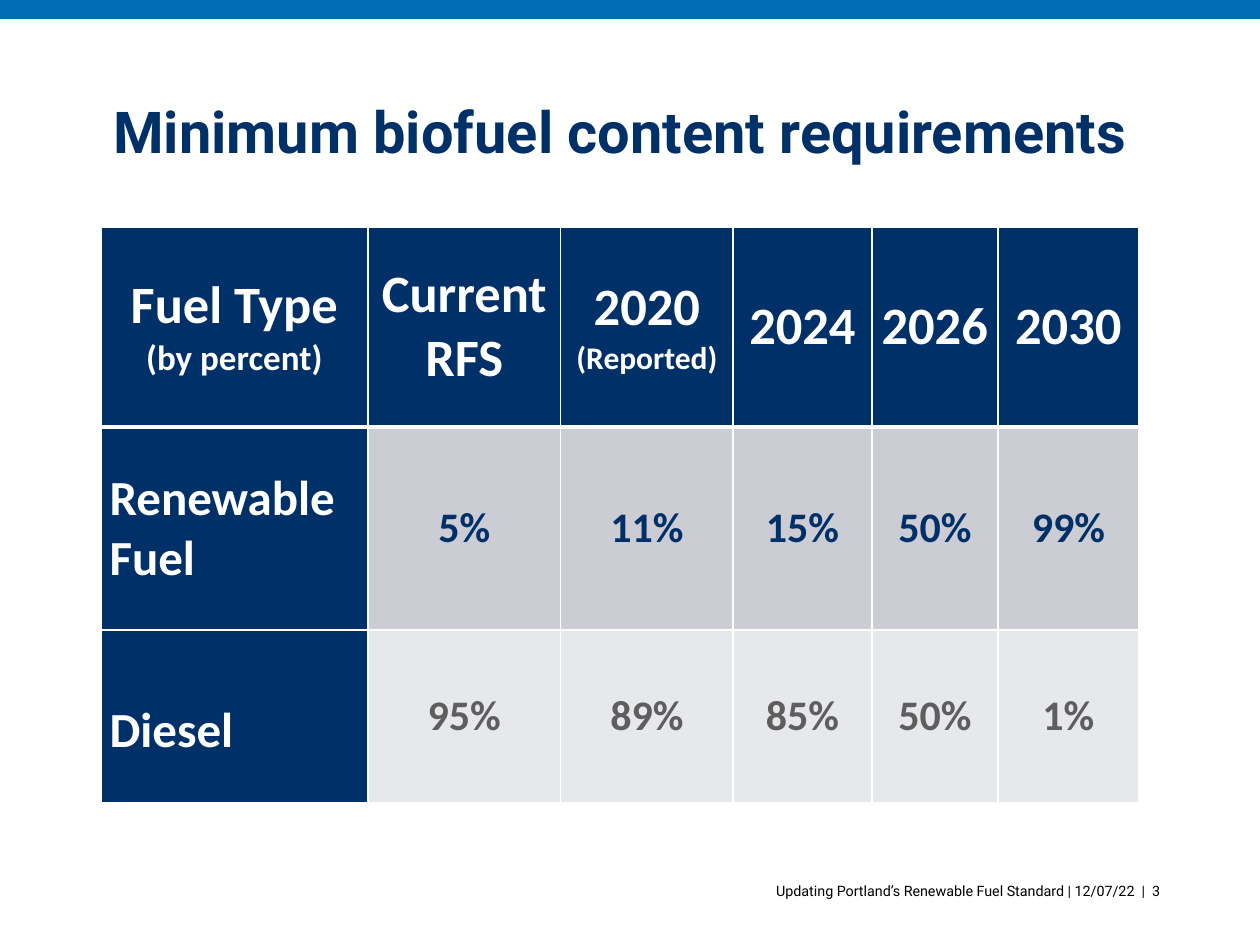
from dataclasses import dataclass
from lxml.etree import SubElement
from pptx import Presentation
from pptx.dml.color import RGBColor
from pptx.enum.shapes import MSO_SHAPE
from pptx.enum.text import MSO_ANCHOR, MSO_AUTO_SIZE, PP_ALIGN
from pptx.oxml.ns import qn
from pptx.slide import Slide
from pptx.table import _Cell
from pptx.text.text import Font
from pptx.util import Inches, Pt


@dataclass(frozen=True)
class Theme:
    navy: str = "003068"
    blue: str = "006DB6"
    white: str = "FFFFFF"
    black: str = "000000"
    gray: str = "5E5E5E"
    mid: str = "CCCDD4"
    pale: str = "E7E8EB"
    head: str = "Roboto"
    body: str = "Calibri"
    title: float = 33
    column: float = 30
    label: float = 28
    value: float = 24
    foot: float = 8.2


@dataclass(frozen=True)
class Head:
    text: str
    width: float
    note: str = ""
    size: float = 0


@dataclass(frozen=True)
class Fuel:
    name: str
    shares: tuple[int, ...]
    height: float
    fill: str
    ink: str


THEME = Theme()
HEADS = (
    Head("Fuel Type ", 2.12, "(by percent)", 20),
    Head("Current RFS", 1.53),
    Head("2020 ", 1.37, "(Reported)", 18),
    Head("2024", 1.1),
    Head("2026", 1),
    Head("2030", 1.12),
)
FUELS = (
    Fuel("Renewable Fuel", (5, 11, 15, 50, 99), 1.61, THEME.mid, THEME.navy),
    Fuel("Diesel", (95, 89, 85, 50, 1), 1.37, THEME.pale, THEME.gray),
)
TOP = 1.59


def style(font: Font, face: str, size: float, ink: str, bold: bool = True) -> None:
    font.name = face
    font.size = Pt(size)
    font.bold = bold
    font.color.rgb = RGBColor.from_string(ink)


def edge(cell: _Cell, side: str, width: float) -> None:
    line = SubElement(cell._tc.get_or_add_tcPr(), qn(f"a:ln{side}"), w=str(Pt(width)))
    fill = SubElement(line, qn("a:solidFill"))
    SubElement(fill, qn("a:srgbClr"), val=THEME.white)


def fill_cell(cell: _Cell, text: str, size: float, ink: str, fill: str,
              top: float = 1, base: float = 1) -> None:
    for side, width in zip("LRTB", (1, 1, top, base)):
        edge(cell, side, width)
    cell.fill.solid()
    cell.fill.fore_color.rgb = RGBColor.from_string(fill)
    cell.margin_left = cell.margin_right = Inches(0.07)
    cell.margin_top = cell.margin_bottom = 0
    cell.vertical_anchor = MSO_ANCHOR.MIDDLE
    para = cell.text_frame.paragraphs[0]
    para.add_run().text = text
    para.alignment = PP_ALIGN.CENTER
    style(para.font, THEME.body, size, ink)


def add_bar(slide: Slide) -> None:
    bar = slide.shapes.add_shape(MSO_SHAPE.RECTANGLE, 0, 0, Inches(10), Inches(0.15))
    bar.shadow.inherit = False
    bar.fill.solid()
    bar.fill.fore_color.rgb = RGBColor.from_string(THEME.blue)
    bar.line.fill.background()


def add_title(slide: Slide) -> None:
    title = slide.shapes.title
    title.left, title.top = Inches(0.8), Inches(0.71)
    title.width, title.height = Inches(8.87), Inches(0.72)
    frame = title.text_frame
    frame.text = "Minimum biofuel content requirements"
    frame.auto_size = MSO_AUTO_SIZE.NONE
    frame.vertical_anchor = MSO_ANCHOR.MIDDLE
    para = frame.paragraphs[0]
    para.alignment = PP_ALIGN.LEFT
    para.line_spacing = 0.9
    style(para.font, THEME.head, THEME.title, THEME.navy)


def add_foot(slide: Slide) -> None:
    box = slide.shapes.add_textbox(Inches(3.7), Inches(6.95), Inches(5.61), Inches(0.4))
    frame = box.text_frame
    frame.word_wrap = True
    frame.text = "Updating Portland’s Renewable Fuel Standard | 12/07/22  |  3"
    para = frame.paragraphs[0]
    para.alignment = PP_ALIGN.RIGHT
    style(para.font, THEME.head, THEME.foot, THEME.black, False)


def add_grid(slide: Slide) -> None:
    width = sum(head.width for head in HEADS)
    height = TOP + sum(fuel.height for fuel in FUELS)
    grid = slide.shapes.add_table(len(FUELS) + 1, len(HEADS), Inches(0.8), Inches(1.8),
                                  Inches(width), Inches(height)).table
    grid.rows[0].height = Inches(TOP)
    for col, head in enumerate(HEADS):
        grid.columns[col].width = Inches(head.width)
        cell = grid.cell(0, col)
        fill_cell(cell, head.text, THEME.column, THEME.white, THEME.navy, base=3)
        if head.note:
            note = cell.text_frame.paragraphs[0].add_run()
            note.text = head.note
            note.font.size = Pt(head.size)
    for row, fuel in enumerate(FUELS, 1):
        grid.rows[row].height = Inches(fuel.height)
        top = 3 if row == 1 else 1
        name = grid.cell(row, 0)
        fill_cell(name, fuel.name, THEME.label, THEME.white, THEME.navy, top)
        name.vertical_anchor = MSO_ANCHOR.BOTTOM
        name.margin_bottom = Inches(0.33)
        name.text_frame.paragraphs[0].alignment = PP_ALIGN.LEFT
        for col, share in enumerate(fuel.shares, 1):
            fill_cell(grid.cell(row, col), f"{share}%", THEME.value, fuel.ink, fuel.fill, top)


def main() -> None:
    deck = Presentation()
    deck.slide_width, deck.slide_height = Inches(10), Inches(7.5)
    slide = deck.slides.add_slide(deck.slide_layouts[5])
    add_bar(slide)
    add_title(slide)
    add_foot(slide)
    add_grid(slide)
    deck.save("out.pptx")


if __name__ == "__main__":
    main()
